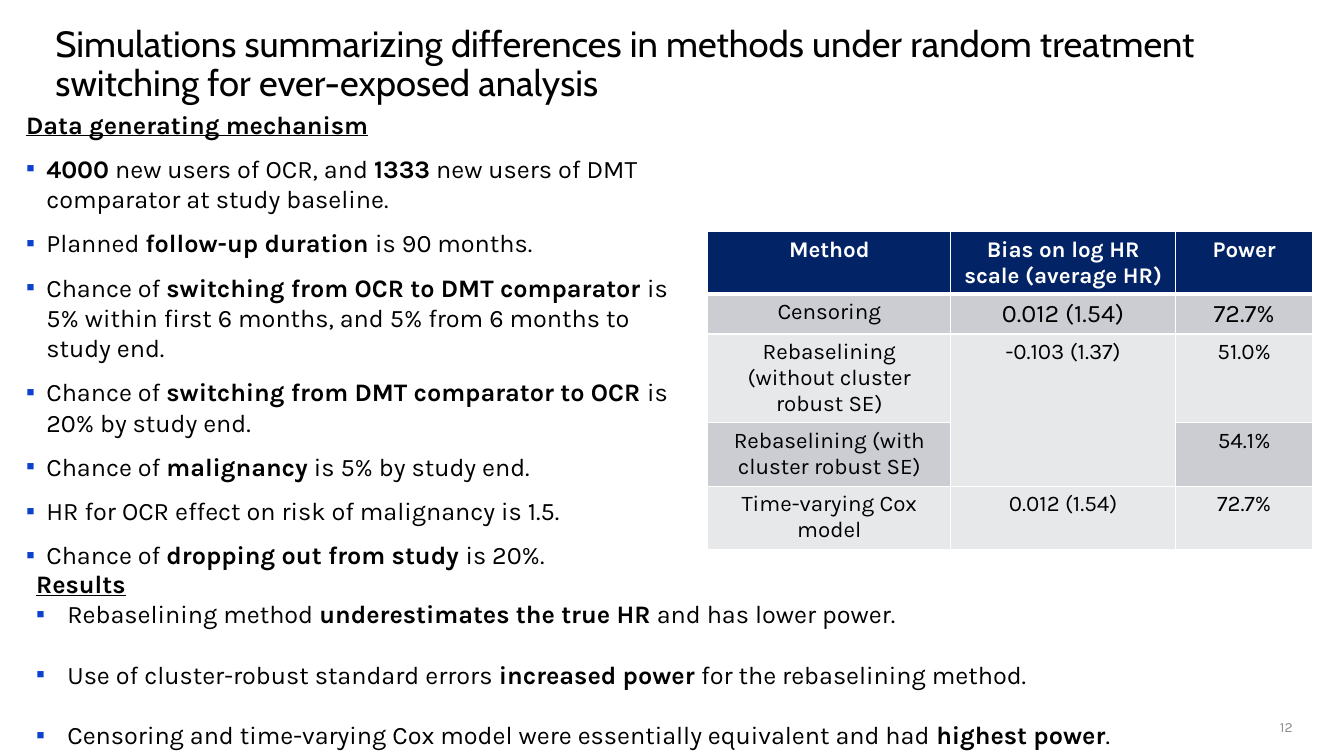
from lxml.etree import SubElement
from pptx import Presentation
from pptx.dml.color import RGBColor
from pptx.enum.text import MSO_ANCHOR, MSO_AUTO_SIZE, PP_ALIGN
from pptx.oxml.ns import qn
from pptx.util import Inches, Pt

TITLE = ("Simulations summarizing differences in methods under random "
         "treatment switching for ever-exposed analysis")
# Bold words stand between ** marks
MECHANISM = [
    "**4000** new users of OCR, and **1333** new users of DMT comparator at study baseline.",
    "Planned **follow-up duration **is 90 months.",
    "Chance of **switching from OCR to DMT comparator **is 5% within first 6 months, "
    "and 5% from 6 months to study end.",
    "Chance of **switching from DMT comparator to OCR **is 20% by study end.",
    "Chance of **malignancy** is 5% by study end.",
    "HR for OCR effect on risk of malignancy is 1.5.",
    "Chance of **dropping out from study **is 20%.",
]
RESULTS = [
    "Rebaselining method **underestimates the true HR** and has lower power.",
    "Use of cluster-robust standard errors **increased power **for the rebaselining method.",
    "Censoring and time-varying Cox model were essentially equivalent "
    "and had **highest power**.",
]
TABLE = [
    ("Method", "Bias on log HR scale (average HR)", "Power"),
    ("Censoring", "0.012 (1.54)", "72.7%"),
    ("Rebaselining (without cluster robust SE)", "-0.103 (1.37)", "51.0%"),
    ("Rebaselining (with cluster robust SE)", "", "54.1%"),
    ("Time-varying Cox model", "0.012 (1.54)", "72.7%"),
]
COL_WIDTHS = (2.41, 2.23, 1.36)
ROW_HEIGHTS = (0.6, 0.38, 0.88, 0.63, 0.63)
LARGE_CELLS = {(1, 1), (1, 2)}
BLACK, WHITE, BULLET, GREY = "000000", "FFFFFF", "0B41CD", "8C8C8C"
HEADER_FILL, BAND_FILLS = "022366", ("E7E8EA", "CCCDD3")


def rgb(value):
    return RGBColor.from_string(value)


def add_run(p, text, color=BLACK, **font):
    r = p.add_run()
    r.text = text
    for name, value in {"name": "Karla", "size": Pt(18), **font}.items():
        setattr(r.font, name, value)
    r.font.color.rgb = rgb(color)


def set_bullet(p, indent):
    pPr = p._p.get_or_add_pPr()
    pPr.set("marL", str(Inches(indent)))
    pPr.set("indent", str(-Inches(indent)))
    color = SubElement(pPr, qn("a:buClr"))
    SubElement(color, qn("a:srgbClr"), val=BULLET)
    SubElement(pPr, qn("a:buFont"), typeface="Arial")
    SubElement(pPr, qn("a:buChar"), char="▪")


def set_frame(tf, margins=(0, 0, 0, 0), anchor=MSO_ANCHOR.TOP):
    tf.word_wrap = True
    tf.auto_size = MSO_AUTO_SIZE.NONE
    tf.vertical_anchor = anchor
    for side, value in zip(("left", "top", "right", "bottom"), margins):
        setattr(tf, f"margin_{side}", Inches(value))


def add_text_box(s, box, **frame):
    tf = s.shapes.add_textbox(*map(Inches, box)).text_frame
    set_frame(tf, **frame)
    return tf


def add_bullet_list(tf, heading, items, indent, first_gap, gap):
    add_run(tf.paragraphs[0], heading, bold=True, underline=True)
    for i, item in enumerate(items):
        p = tf.add_paragraph()
        p.space_before = Pt(gap if i else first_gap)
        set_bullet(p, indent)
        for j, part in enumerate(item.split("**")):
            if part:
                add_run(p, part, bold=j % 2 == 1)


def set_borders(cell, bottom):
    tcPr = cell._tc.get_or_add_tcPr()
    for side, width in (("L", 1), ("R", 1), ("T", 1), ("B", bottom)):
        ln = SubElement(tcPr, qn(f"a:ln{side}"), w=str(Pt(width)))
        fill = SubElement(ln, qn("a:solidFill"))
        SubElement(fill, qn("a:srgbClr"), val=WHITE)


def add_method_table(s):
    box = map(Inches, (7.02, 2.3, sum(COL_WIDTHS), sum(ROW_HEIGHTS)))
    table = s.shapes.add_table(len(TABLE), len(COL_WIDTHS), *box).table
    for column, width in zip(table.columns, COL_WIDTHS):
        column.width = Inches(width)
    for row, height in zip(table.rows, ROW_HEIGHTS):
        row.height = Inches(height)
    for i, texts in enumerate(TABLE):
        header = i == 0
        for j, text in enumerate(texts):
            cell = table.cell(i, j)
            set_borders(cell, bottom=3 if header else 1)
            cell.fill.solid()
            cell.fill.fore_color.rgb = rgb(HEADER_FILL if header else BAND_FILLS[i % 2])
            p = cell.text_frame.paragraphs[0]
            p.alignment = PP_ALIGN.CENTER
            if text:
                add_run(p, text, WHITE if header else BLACK, bold=header,
                        size=Pt(18 if (i, j) in LARGE_CELLS else 16))
    table.cell(2, 1).merge(table.cell(3, 1))


def main():
    prs = Presentation()
    prs.slide_width, prs.slide_height = Inches(13.33), Inches(7.5)
    s = prs.slides.add_slide(prs.slide_layouts[5])

    title = s.shapes.title
    title.left, title.top, title.width, title.height = map(Inches, (0.55, 0.26, 11.8, 0.37))
    set_frame(title.text_frame)
    p = title.text_frame.paragraphs[0]
    p.alignment, p.line_spacing = PP_ALIGN.LEFT, 0.9
    add_run(p, TITLE, name="Cabin", size=Pt(26))

    mechanism = add_text_box(s, (0.26, 1.08, 6.37, 4.15))
    add_bullet_list(mechanism, "Data generating mechanism", MECHANISM, 0.2, 10, 10)

    number = add_text_box(s, (12.27, 7.13, 0.55, 0.17), anchor=MSO_ANCHOR.MIDDLE)
    number.paragraphs[0].alignment = PP_ALIGN.RIGHT
    add_run(number.paragraphs[0], "12", GREY, size=Pt(10))

    add_method_table(s)

    results = add_text_box(s, (0.26, 5.59, 13.07, 2.22), margins=(0.1, 0.05, 0.1, 0.05))
    add_bullet_list(results, "Results", RESULTS, 0.31, 0, 21.5)

    prs.save("out.pptx")


if __name__ == "__main__":
    main()
